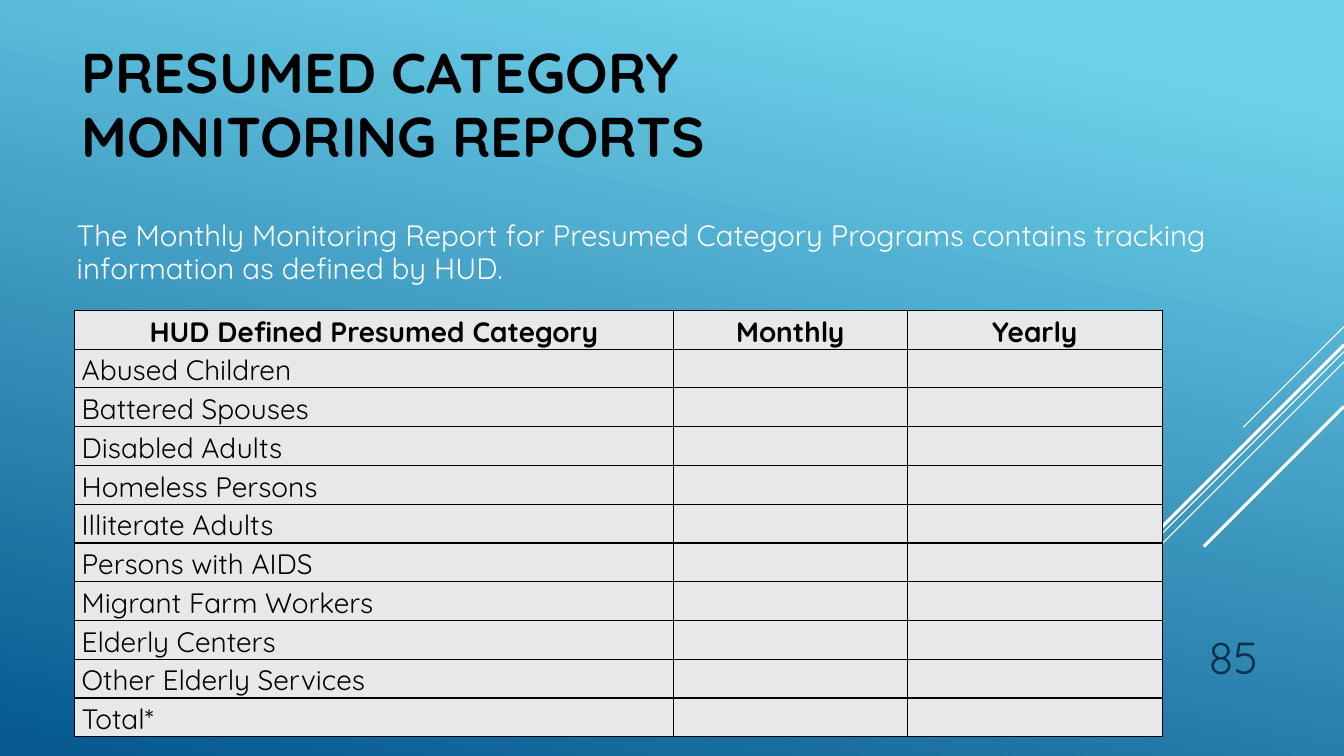
import pptx
import pptx.dml.color
import pptx.enum.shapes
import pptx.enum.text
import pptx.oxml.ns
import pptx.util
from lxml import etree

Cm, Pt = pptx.util.Cm, pptx.util.Pt
qn = pptx.oxml.ns.qn
ALIGN = pptx.enum.text.PP_ALIGN
ANCHOR = pptx.enum.text.MSO_ANCHOR

COLORS = {"sky": "6ED2EB", "deep": "06588E", "white": "FFFFFF",
          "black": "000000", "cell": "E7E8EA", "number": "0A304A"}
WIDTH, HEIGHT = 33.87, 19.05
RAYS = [(8.23, 2.54, 0.75), (8.86, 8.28, 0.75), (9.12, 5.27, 0.75),
        (8.69, 4.85, 2.25), (10.24, 3.53, 2.25)]
HEADERS = ["HUD Defined Presumed Category", "Monthly", "Yearly"]
CATEGORIES = ["Abused Children", "Battered Spouses", "Disabled Adults",
              "Homeless Persons", "Illiterate Adults", "Persons with AIDS",
              "Migrant Farm Workers", "Elderly Centers",
              "Other Elderly Services", "Total*"]


def rgb(name):
    return pptx.dml.color.RGBColor.from_string(COLORS[name])


def apply(target, values):
    for name, value in values.items():
        setattr(target, name, value)


class Deck:
    """Hold the style and current slide, and draw each kind of element."""

    def __init__(self, font):
        self.font = font
        self.prs = pptx.Presentation()
        apply(self.prs, {"slide_width": Cm(WIDTH), "slide_height": Cm(HEIGHT)})
        self.s = self.prs.slides.add_slide(self.prs.slide_layouts[1])

    def background(self, stops, angle):
        fill = self.s.background.fill
        fill.gradient()
        fill.gradient_angle = angle
        for stop, (position, color) in zip(fill.gradient_stops, stops):
            stop.position = position
            stop.color.rgb = rgb(color)

    def text(self, tf, text, size, color, bold=False, **paragraph):
        tf.text = text
        for p in tf.paragraphs:
            apply(p, paragraph)
            for r in p.runs:
                apply(r.font, {"name": self.font, "size": Pt(size), "bold": bold})
                r.font.color.rgb = rgb(color)

    def box(self, sp, at, anchor, text, size, color, **style):
        apply(sp, dict(zip(("left", "top", "width", "height"), map(Cm, at))))
        apply(sp.text_frame, {"word_wrap": True, "vertical_anchor": anchor,
                              "auto_size": pptx.enum.text.MSO_AUTO_SIZE.NONE})
        self.text(sp.text_frame, text, size, color, **style)

    def title(self, text, at):
        self.box(self.s.shapes.title, at, ANCHOR.MIDDLE, text, 40, "black",
                 bold=True, alignment=ALIGN.LEFT, line_spacing=0.95)

    def body(self, text, at):
        sp = self.s.placeholders[1]
        self.box(sp, at, ANCHOR.TOP, text, 21, "white",
                 line_spacing=0.95, space_before=Pt(0))
        for p in sp.text_frame.paragraphs:
            pPr = p._p.get_or_add_pPr()
            pPr.set("marL", "0")
            pPr.set("indent", "0")
            etree.SubElement(pPr, qn("a:buNone"))

    def number(self, text, at):
        sp = self.s.shapes.add_textbox(*map(Cm, at))
        self.box(sp, at, ANCHOR.BOTTOM, text, 32, "number", alignment=ALIGN.RIGHT)

    def ray(self, top, run, width):
        ends = (WIDTH, top, WIDTH - run, top + run)
        kind = pptx.enum.shapes.MSO_CONNECTOR.STRAIGHT
        line = self.s.shapes.add_connector(kind, *map(Cm, ends))
        line.line.color.rgb = rgb("white")
        line.line.width = Pt(width)
        etree.SubElement(line._element.spPr, qn("a:effectLst"))

    def cell(self, cell, text, heading):
        tcPr = cell._tc.get_or_add_tcPr()
        for side in ("a:lnL", "a:lnR", "a:lnT", "a:lnB"):
            ln = etree.SubElement(tcPr, qn(side), w=str(Pt(1)))
            fill = etree.SubElement(ln, qn("a:solidFill"))
            etree.SubElement(fill, qn("a:srgbClr"), val=COLORS["black"])
        cell.fill.solid()
        cell.fill.fore_color.rgb = rgb("cell")
        apply(cell, {"margin_left": Cm(0.18), "margin_right": Cm(0.18),
                     "margin_top": Cm(0.03), "margin_bottom": 0})
        self.text(cell.text_frame, text, 20, "black", bold=heading, line_spacing=1.07,
                  alignment=ALIGN.CENTER if heading else ALIGN.LEFT)

    def table(self, rows, left, top, widths, row_height):
        size = (left, top, sum(widths), row_height * len(rows))
        table = self.s.shapes.add_table(len(rows), len(widths), *map(Cm, size)).table
        for column, width in zip(table.columns, widths):
            column.width = Cm(width)
        for i, row in enumerate(rows):
            table.rows[i].height = Cm(row_height)
            for j, text in enumerate(row):
                self.cell(table.cell(i, j), text, i == 0)


def main():
    deck = Deck("Quicksand")
    deck.background([(0.1, "sky"), (1, "deep")], 258)
    for ray in RAYS:
        deck.ray(*ray)
    deck.title("PRESUMED CATEGORY\nMONITORING REPORTS", (1.8, 0.84, 30.3, 3.68))
    deck.body("The Monthly Monitoring Report for Presumed Category Programs "
              "contains tracking information as defined by HUD.",
              (1.68, 5.4, 30.58, 2.2))
    deck.table([HEADERS] + [[name, "", ""] for name in CATEGORIES],
               1.88, 7.82, (15.09, 5.89, 6.43), 0.93)
    deck.number("85", (28.78, 15.49, 3.18, 1.85))
    deck.prs.save("out.pptx")


if __name__ == "__main__":
    main()
